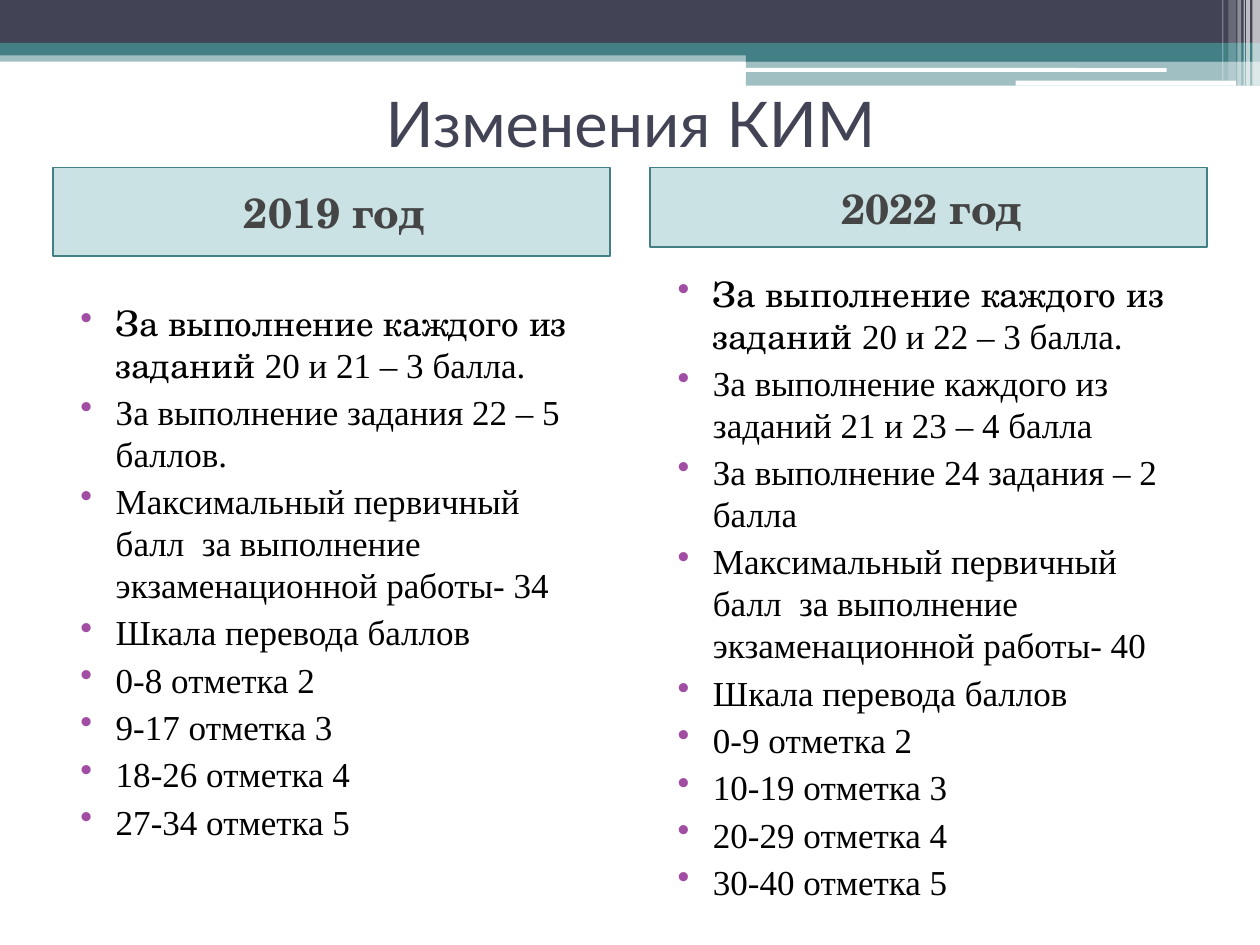
from dataclasses import dataclass

from lxml.etree import SubElement
from pptx import Presentation
from pptx.dml.color import RGBColor
from pptx.enum.shapes import MSO_SHAPE
from pptx.enum.text import MSO_ANCHOR, PP_ALIGN
from pptx.oxml.ns import qn
from pptx.util import Inches, Pt


@dataclass(frozen=True)
class Theme:
    dark: str = "424456"
    teal: str = "438086"
    white: str = "FFFFFF"
    header_fill: str = "328E97"
    header_text: str = "454545"
    body_text: str = "000000"
    bullet: str = "A04DA3"
    title_font: str = "Lato"
    accent_font: str = "TeX Gyre Schola"
    body_font: str = "Times New Roman"
    title_size: int = 36
    header_size: int = 24
    body_size: int = 20
    line_pitch: int = 24
    space_before: int = 3


THEME = Theme()


@dataclass(frozen=True)
class Box:
    left: float
    top: float
    width: float
    height: float

    def lengths(self) -> tuple:
        return tuple(Inches(n) for n in (self.left, self.top, self.width, self.height))


@dataclass(frozen=True)
class Band:
    box: Box
    color: str
    opacity: int = 100
    rounded: bool = False


@dataclass(frozen=True)
class Column:
    year: str
    left: float
    header_height: float
    body_top: float
    tasks: str
    points: tuple[str, ...]


BANDS = (
    Band(Box(0, 0.4, 10, 0.09), THEME.teal, 50),
    Band(Box(0, 0, 10, 0.34), THEME.dark),
    Band(Box(0, 0.34, 10, 0.1), THEME.teal),
    Band(Box(5.92, 0.39, 4.08, 0.1), THEME.teal),
    Band(Box(5.92, 0.48, 4.08, 0.2), THEME.teal, 50),
    Band(Box(5.91, 0.54, 3.35, 0.03), THEME.white, rounded=True),
    Band(Box(8.06, 0.64, 1.75, 0.04), THEME.white, rounded=True),
    Band(Box(9.94, 0, 0.06, 0.68), THEME.white, 65),
    Band(Box(9.89, 0, 0.03, 0.68), THEME.white, 65),
    Band(Box(9.87, 0, 0.01, 0.68), THEME.white, 60),
    Band(Box(9.82, 0, 0.03, 0.68), THEME.white, 40),
    Band(Box(9.75, 0, 0.06, 0.64), THEME.white, 20),
    Band(Box(9.7, 0, 0.01, 0.64), THEME.white, 30),
)

COLUMN_WIDTH = 4.42
HEADER_TOP = 1.33
BODY_BOTTOM = 7.21
COLUMNS = (
    Column("2019 год", 0.42, 0.7, 2.34, "20 и 21 – 3 балла.", (
        "За выполнение задания 22 – 5 баллов.",
        "Максимальный первичный балл  за выполнение экзаменационной работы- 34",
        "Шкала перевода баллов",
        "0-8 отметка 2",
        "9-17 отметка 3",
        "18-26 отметка 4",
        "27-34 отметка 5",
    )),
    Column("2022 год", 5.16, 0.63, 2.11, "20 и 22 – 3 балла.", (
        "За выполнение каждого из заданий 21 и 23 – 4 балла",
        "За выполнение 24 задания – 2 балла",
        "Максимальный первичный балл  за выполнение экзаменационной работы- 40",
        "Шкала перевода баллов",
        "0-9 отметка 2",
        "10-19 отметка 3",
        "20-29 отметка 4",
        "30-40 отметка 5",
    )),
)


def style_font(font, name: str, size: int, color: str, bold: bool = False) -> None:
    font.name = name
    font.size = Pt(size)
    font.bold = bold
    font.color.rgb = RGBColor.from_string(color)


def add_band(slide, band: Band):
    kind = MSO_SHAPE.ROUNDED_RECTANGLE if band.rounded else MSO_SHAPE.RECTANGLE
    shape = slide.shapes.add_shape(kind, *band.box.lengths())
    shape.shadow.inherit = False
    shape.fill.solid()
    shape.fill.fore_color.rgb = RGBColor.from_string(band.color)
    shape.line.fill.background()
    if band.opacity < 100:
        color = shape.fill._xPr.find(qn("a:solidFill"))[0]
        SubElement(color, qn("a:alpha"), val=str(band.opacity * 1000))
    return shape


def add_text_box(slide, box: Box):
    text_frame = slide.shapes.add_textbox(*box.lengths()).text_frame
    text_frame.word_wrap = True
    return text_frame


def add_title(slide, text: str) -> None:
    text_frame = add_text_box(slide, Box(0.42, 0.62, 9.17, 0.7))
    text_frame.vertical_anchor = MSO_ANCHOR.MIDDLE
    paragraph = text_frame.paragraphs[0]
    paragraph.text = text
    paragraph.alignment = PP_ALIGN.CENTER
    style_font(paragraph.font, THEME.title_font, THEME.title_size, THEME.dark)


def add_header(slide, column: Column) -> None:
    box = Box(column.left, HEADER_TOP, COLUMN_WIDTH, column.header_height)
    shape = add_band(slide, Band(box, THEME.header_fill, 25))
    shape.line.color.rgb = RGBColor.from_string(THEME.teal)
    shape.line.width = Pt(1)
    shape.text_frame.vertical_anchor = MSO_ANCHOR.MIDDLE
    paragraph = shape.text_frame.paragraphs[0]
    paragraph.text = column.year
    paragraph.alignment = PP_ALIGN.CENTER
    paragraph.space_before = Pt(THEME.space_before)
    paragraph._p.get_or_add_pPr().set("marL", str(Inches(0.05)))
    style_font(paragraph.font, THEME.accent_font, THEME.header_size, THEME.header_text, True)


def format_bullet(paragraph) -> None:
    paragraph.space_before = Pt(THEME.space_before)
    paragraph.line_spacing = Pt(THEME.line_pitch)
    style_font(paragraph.font, THEME.body_font, THEME.body_size, THEME.body_text)
    properties = paragraph._p.get_or_add_pPr()
    properties.set("marL", str(Inches(0.4)))
    properties.set("indent", str(Inches(-0.28)))
    bullet_color = properties.makeelement(qn("a:buClr"))
    SubElement(bullet_color, qn("a:srgbClr"), val=THEME.bullet)
    bullet = properties.makeelement(qn("a:buChar"), char="•")
    default_run = properties.find(qn("a:defRPr"))
    default_run.addprevious(bullet_color)
    default_run.addprevious(bullet)


def add_body(slide, column: Column) -> None:
    height = BODY_BOTTOM - column.body_top
    text_frame = add_text_box(slide, Box(column.left, column.body_top, COLUMN_WIDTH, height))
    paragraph = text_frame.paragraphs[0]
    lead = paragraph.add_run()
    lead.text = "За выполнение каждого из заданий "
    lead.font.name = THEME.accent_font
    paragraph.add_run().text = column.tasks
    format_bullet(paragraph)
    for point in column.points:
        paragraph = text_frame.add_paragraph()
        paragraph.text = point
        format_bullet(paragraph)


def main() -> None:
    presentation = Presentation()
    presentation.slide_width = Inches(10)
    presentation.slide_height = Inches(7.5)
    slide = presentation.slides.add_slide(presentation.slide_layouts[6])
    for band in BANDS:
        add_band(slide, band)
    add_title(slide, "Изменения КИМ")
    for column in COLUMNS:
        add_header(slide, column)
        add_body(slide, column)
    presentation.save("out.pptx")


if __name__ == "__main__":
    main()
